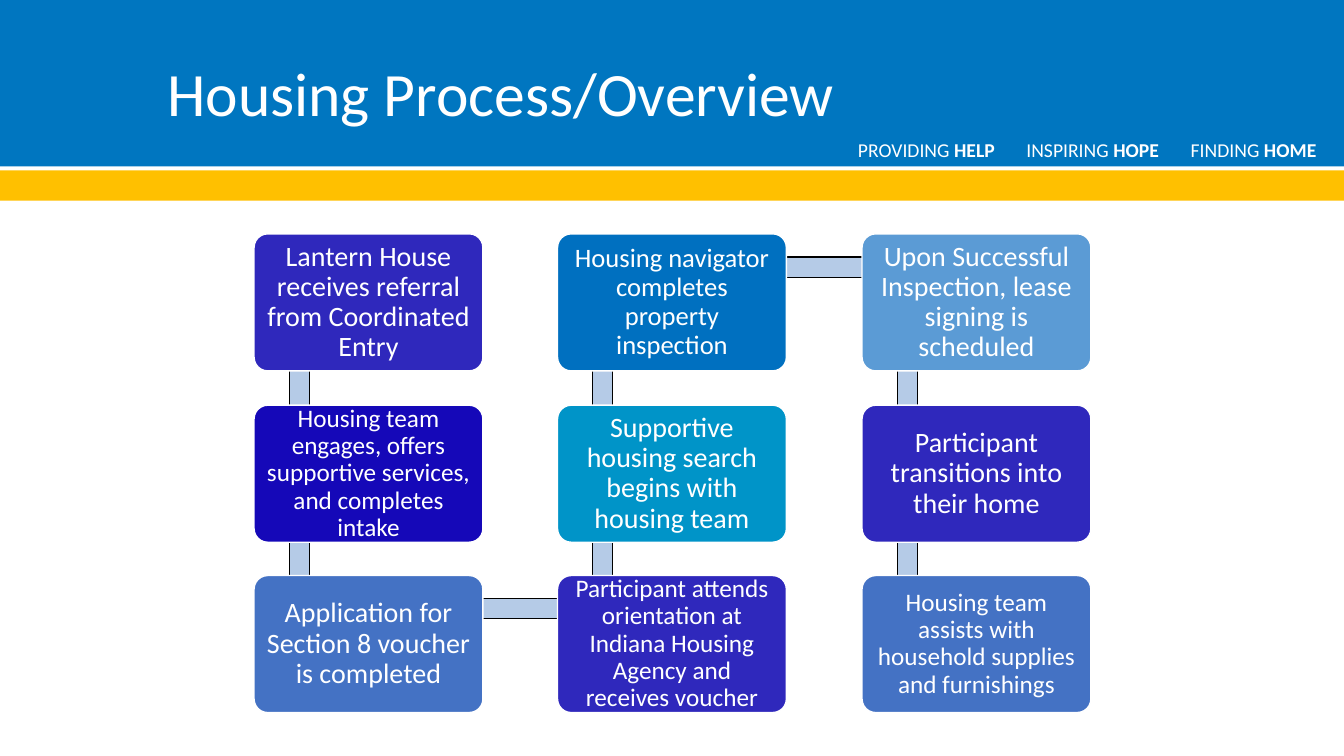
from lxml import etree
from pptx import Presentation
from pptx import util as u
from pptx.dml import color
from pptx.enum import shapes, text
from pptx.oxml import ns

SHAPE = shapes.MSO_SHAPE
ANCHOR = text.MSO_ANCHOR
ALIGN = text.PP_ALIGN


def rgb(value):
    return color.RGBColor.from_string(value)


def add_block(kind, left, top, width, height, fill, line=None, points=1):
    block = slide.shapes.add_shape(kind, *map(u.Inches, (left, top, width, height)))
    block.shadow.inherit = False
    block.fill.solid()
    block.fill.fore_color.rgb = rgb(fill)
    if line:
        block.line.color.rgb = rgb(line)
        block.line.width = u.Pt(points)
    else:
        block.line.fill.background()
    return block


presentation = Presentation()
presentation.slide_width = u.Inches(13.33)
presentation.slide_height = u.Inches(7.5)
slide = presentation.slides.add_slide(presentation.slide_layouts[6])

add_block(SHAPE.RECTANGLE, 0, 1.69, 13.33, 0.3, "FFC000")
add_block(SHAPE.RECTANGLE, 0, 0, 13.33, 1.65, "0076C0")

tagline = slide.shapes.add_textbox(*map(u.Inches, (8.03, 1.31, 5.13, 0.34)))
tagline_format = {"word_wrap": True, "vertical_anchor": ANCHOR.BOTTOM,
                  "margin_left": u.Inches(0.48), "margin_right": 0}
for name, value in tagline_format.items():
    setattr(tagline.text_frame, name, value)
paragraph = tagline.text_frame.paragraphs[0]
tab_list = etree.SubElement(paragraph._p.get_or_add_pPr(), ns.qn("a:tabLst"))
for position in (1.67, 3.3):
    etree.SubElement(tab_list, ns.qn("a:tab"), pos=str(u.Inches(position)), algn="l")
mottos = [("PROVIDING ", "HELP"), ("\tINSPIRING ", "HOPE"), ("\tFINDING ", "HOME")]
for motto in mottos:
    for words, bold in zip(motto, (False, True)):
        run = paragraph.add_run()
        run.text = words
        for name, value in {"name": "Calibri", "size": u.Pt(14), "bold": bold}.items():
            setattr(run.font, name, value)
        run.font.color.rgb = rgb("FFFFFF")

title = slide.shapes.add_textbox(*map(u.Inches, (1.56, 0, 10.46, 1.34)))
title.text_frame.word_wrap = True
title.text_frame.vertical_anchor = ANCHOR.BOTTOM
paragraph = title.text_frame.paragraphs[0]
paragraph.text = "Housing Process/Overview"
paragraph.line_spacing = 0.9
for name, value in {"name": "Calibri", "size": u.Pt(44)}.items():
    setattr(paragraph.font, name, value)
paragraph.font.color.rgb = rgb("FFFFFF")

columns = [2.52, 5.53, 8.55]
rows = [2.32, 4.02, 5.71]
steps = [
    (0, 0, "2F28BC", 20, "Lantern House receives referral from Coordinated Entry"),
    (0, 1, "1508B8", 18, "Housing team engages, offers supportive services, and completes intake"),
    (0, 2, "4472C4", 20, "Application for Section 8 voucher is completed"),
    (1, 2, "2F28BC", 18, "Participant attends orientation at Indiana Housing Agency and receives voucher"),
    (1, 1, "0094C8", 20, "Supportive housing search begins with housing team"),
    (1, 0, "0070C0", 19, "Housing navigator completes property inspection"),
    (2, 0, "5B9BD5", 20, "Upon Successful Inspection, lease signing is scheduled"),
    (2, 1, "2F28BC", 20, "Participant transitions into their home"),
    (2, 2, "4472C4", 18, "Housing team assists with household supplies and furnishings"),
]

for step, following in zip(steps, steps[1:]):
    left = columns[step[0]]
    top = rows[min(step[1], following[1])]
    if step[0] == following[0]:
        bar = (left + 0.35, top + 0.34, 0.2, 1.69)
    else:
        bar = (left + 0.46, top + 0.23, 3.01, 0.2)
    add_block(SHAPE.RECTANGLE, *bar, "B5CBE7", "000000", 0.75)

for column, row, fill, size, words in steps:
    box = add_block(SHAPE.ROUNDED_RECTANGLE, columns[column], rows[row], 2.27, 1.36, fill, "FFFFFF")
    box.adjustments[0] = 0.1
    inset = u.Inches(0.07 if size == 18 else 0.08)
    box_format = {"word_wrap": True, "vertical_anchor": ANCHOR.MIDDLE}
    for side in ("left", "top", "right", "bottom"):
        box_format["margin_" + side] = inset
    for name, value in box_format.items():
        setattr(box.text_frame, name, value)
    paragraph = box.text_frame.paragraphs[0]
    paragraph.text = words
    for name, value in {"alignment": ALIGN.CENTER, "line_spacing": 0.9}.items():
        setattr(paragraph, name, value)
    for name, value in {"name": "Calibri", "size": u.Pt(size)}.items():
        setattr(paragraph.font, name, value)
    paragraph.font.color.rgb = rgb("FFFFFF")

presentation.save("out.pptx")
